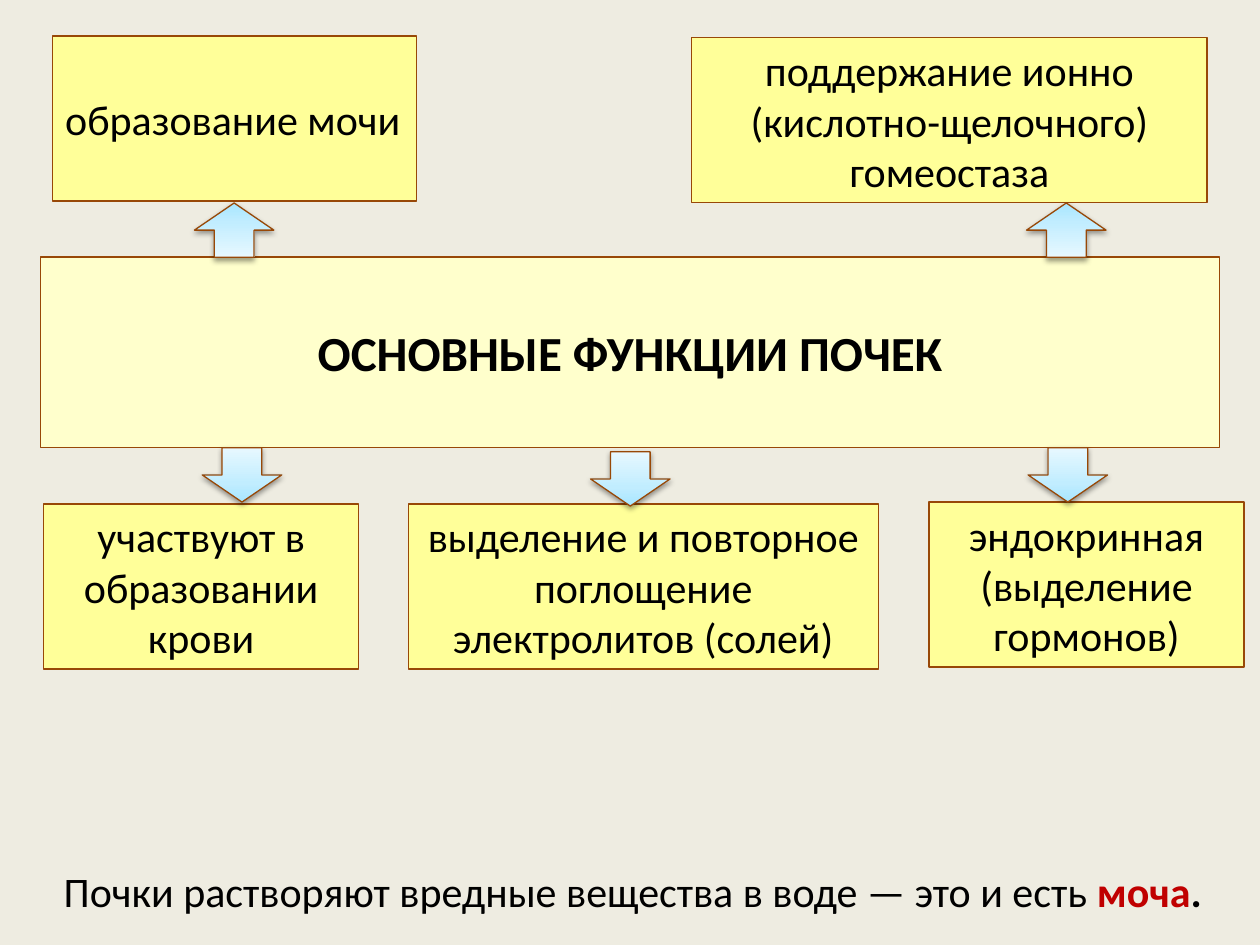
import copy

from lxml import etree
from pptx import Presentation
from pptx import util as u
from pptx.dml.color import RGBColor
from pptx.enum import shapes, text
from pptx.oxml.ns import qn

Pt = u.Pt
FONT = "Calibri"
COLORS = {
    "background": "EEECE1",
    "heading": "FFFFCC",
    "card": "FFFF99",
    "border": "984807",
    "text": "000000",
    "accent": "C00000",
    "shadow": "000000",
}
ARROW_STOPS = [(0, "A7E6FF"), (0.35, "C1EDFF"), (1, "E7F8FF")]
ARROW_W, ARROW_H = 45.4, 31
CENTER, LEFT = text.PP_ALIGN.CENTER, text.PP_ALIGN.LEFT

HEADING_BOX = (23, 146.9, 674, 108.7)
FOOTER_BOX = (23.8, 491, 687.6, 36)
CARDS = [
    ("образование мочи", (30.2, 20.6, 208, 94.3), LEFT),
    ("поддержание ионно (кислотно-щелочного) гомеостаза",
     (395.3, 21.6, 294.5, 94.3), CENTER),
    ("выделение и повторное поглощение электролитов (солей)",
     (233.3, 288, 268.6, 94.3), CENTER),
    ("эндокринная (выделение гормонов)", (530.9, 286.9, 180, 94.3), CENTER),
    ("участвуют в образовании крови", (25, 288, 180, 94.3), CENTER),
]
ARROWS = [
    (115.6, 255.9, 0),
    (586.6, 116, 180),
    (111.1, 116, 180),
    (587.5, 255.9, 0),
    (337.5, 258.2, 0),
]


def rgb(name):
    return RGBColor.from_string(COLORS[name])


def format_run(r, size, color="text", bold=False):
    r.font.name = FONT
    r.font.size = Pt(size)
    r.font.bold = bold
    r.font.color.rgb = rgb(color)


def set_border(sp):
    sp.line.color.rgb = rgb("border")
    sp.line.width = Pt(0.75)


def fill_box(sp, label, fill, size, align=CENTER, bold=False):
    sp.fill.solid()
    sp.fill.fore_color.rgb = rgb(fill)
    set_border(sp)
    tf = sp.text_frame
    tf.text = label
    tf.word_wrap = True
    tf.auto_size = text.MSO_AUTO_SIZE.NONE
    tf.vertical_anchor = text.MSO_ANCHOR.MIDDLE
    p = tf.paragraphs[0]
    p.alignment = align
    format_run(p.runs[0], size, bold=bold)


def add_heading(s, box):
    sp = s.shapes.title
    sp.left, sp.top, sp.width, sp.height = map(Pt, box)
    fill_box(sp, "ОСНОВНЫЕ ФУНКЦИИ ПОЧЕК", "heading", 28, bold=True)


def add_card(s, label, box, align):
    sp = s.shapes.add_shape(shapes.MSO_SHAPE.RECTANGLE, *map(Pt, box))
    sp.shadow.inherit = False
    fill_box(sp, label, "card", 24, align)


def add_shadow(sp):
    sp.shadow.inherit = False
    effects = sp._element.spPr.find(qn("a:effectLst"))
    shadow = etree.SubElement(
        effects, qn("a:outerShdw"), blurRad=str(Pt(3.1)), dist=str(Pt(1.6)),
        dir="5400000", rotWithShape="0")
    color = etree.SubElement(shadow, qn("a:srgbClr"), val=COLORS["shadow"])
    etree.SubElement(color, qn("a:alpha"), val="38000")


def add_arrow(s, left, top, rotation):
    sp = s.shapes.add_shape(shapes.MSO_SHAPE.DOWN_ARROW,
                            Pt(left), Pt(top), Pt(ARROW_W), Pt(ARROW_H))
    sp.rotation = rotation
    sp.fill.gradient()
    sp.fill.gradient_angle = 90
    stops = sp._element.spPr.find(qn("a:gradFill")).find(qn("a:gsLst"))
    stops.insert(1, copy.deepcopy(stops[0]))
    for stop, (position, color) in zip(sp.fill.gradient_stops, ARROW_STOPS):
        stop.position = position
        stop.color.rgb = RGBColor.from_string(color)
    set_border(sp)
    add_shadow(sp)


def add_footer(s, box):
    tf = s.shapes.add_textbox(*map(Pt, box)).text_frame
    tf.word_wrap = True
    tf.margin_left = Pt(12.6)
    p = tf.paragraphs[0]
    parts = [
        ("Почки растворяют вредные вещества в воде — это и есть ", "text", False),
        ("моча", "accent", True),
        (".", "text", True),
    ]
    for label, color, bold in parts:
        r = p.add_run()
        r.text = label
        format_run(r, 24, color, bold)


def main():
    prs = Presentation()
    prs.slide_width, prs.slide_height = Pt(720), Pt(540)
    s = prs.slides.add_slide(prs.slide_layouts.get_by_name("Title Only"))
    s.background.fill.solid()
    s.background.fill.fore_color.rgb = rgb("background")
    add_heading(s, HEADING_BOX)
    for card in CARDS:
        add_card(s, *card)
    for arrow in ARROWS:
        add_arrow(s, *arrow)
    add_footer(s, FOOTER_BOX)
    prs.save("out.pptx")


if __name__ == "__main__":
    main()
